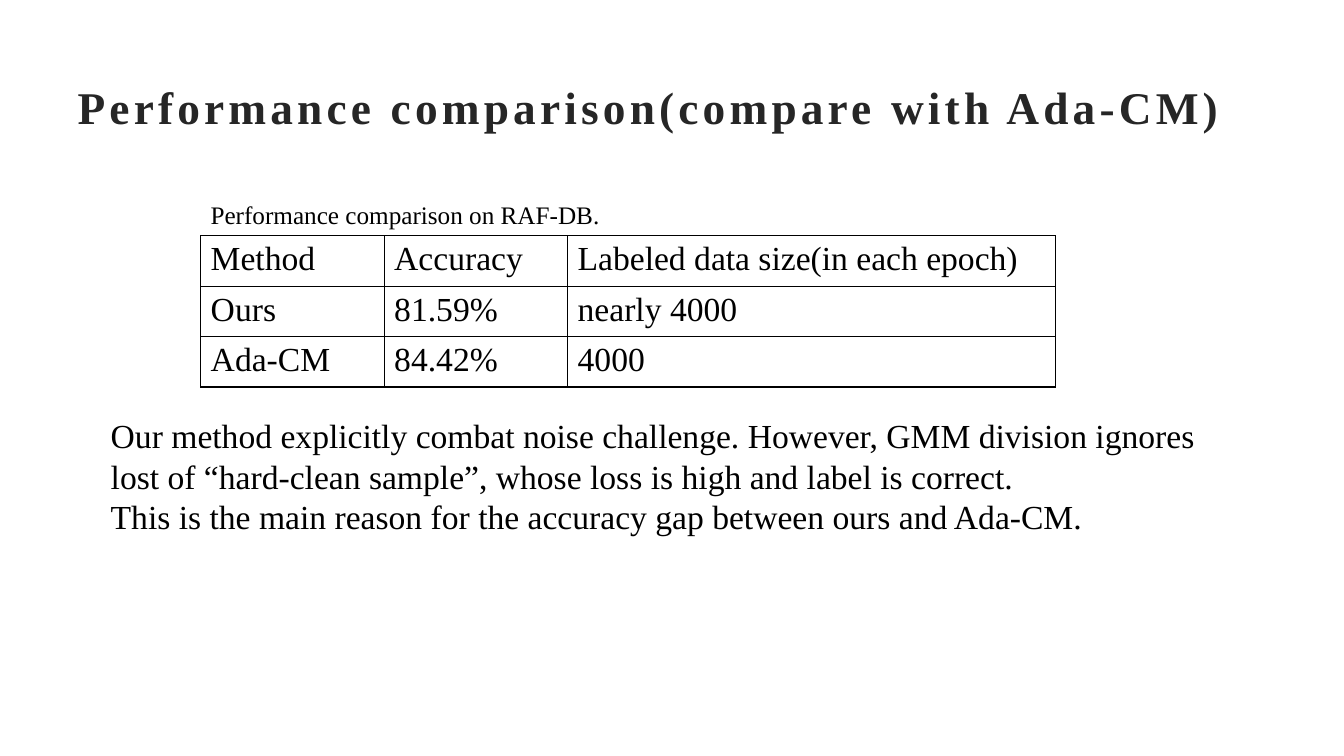
"""Build the slide comparing our method with Ada-CM."""
import lxml.etree
import pptx
import pptx.dml.color
import pptx.enum.text
import pptx.oxml.ns
import pptx.util

Inches = pptx.util.Inches
COLORS = {"title": "262626", "text": "000000", "border": "000000"}
qn = pptx.oxml.ns.qn


def write(frame, lines, color, **formats):
    """Fill a text frame with formatted left-aligned paragraphs."""
    frame.word_wrap = True
    for index, line in enumerate(lines):
        para = frame.paragraphs[0] if index == 0 else frame.add_paragraph()
        para.alignment = pptx.enum.text.PP_ALIGN.LEFT
        span = para.add_run()
        span.text = line
        span.font.color.rgb = pptx.dml.color.RGBColor.from_string(COLORS[color])
        for name, value in {"name": "Times New Roman", **formats}.items():
            setattr(span.font, name, value)


def place(box, left, top, width, height):
    """Position a shape by lengths in inches."""
    places = {"left": left, "top": top, "width": width, "height": height}
    for name, value in places.items():
        setattr(box, name, Inches(value))


deck = pptx.Presentation()
deck.slide_width, deck.slide_height = Inches(13.33), Inches(7.5)
page = deck.slides.add_slide(deck.slide_layouts[5])

title = page.shapes.title
place(title, 0.67, 0.67, 12, 0.77)
write(title.text_frame, ["Performance comparison(compare with Ada-CM)"], "title",
      size=pptx.util.Pt(32.4), bold=True)
title.text_frame.auto_size = pptx.enum.text.MSO_AUTO_SIZE.NONE
title.text_frame.vertical_anchor = pptx.enum.text.MSO_ANCHOR.MIDDLE
title.text_frame.paragraphs[0].runs[0].font._element.set("spc", "300")

results = [
    ["Method", "Accuracy", "Labeled data size(in each epoch)"],
    ["Ours", "81.59%", "nearly 4000"],
    ["Ada-CM", "84.42%", "4000"],
]
widths = [1.82, 1.82, 4.84]
row_height = 0.5
table = page.shapes.add_table(
    len(results), len(widths), Inches(1.99), Inches(2.34),
    Inches(sum(widths)), Inches(row_height * len(results))).table
table.first_row = table.horz_banding = False
for column, width in zip(table.columns, widths):
    column.width = Inches(width)
for row, values in zip(table.rows, results):
    row.height = Inches(row_height)
    for cell, value in zip(row.cells, values):
        write(cell.text_frame, [value], "text", size=pptx.util.Pt(24))
        properties = cell._tc.get_or_add_tcPr()
        for side in ("a:lnL", "a:lnR", "a:lnT", "a:lnB"):
            border = lxml.etree.SubElement(properties, qn(side), w="12700")
            fill = lxml.etree.SubElement(border, qn("a:solidFill"))
            lxml.etree.SubElement(fill, qn("a:srgbClr"), val=COLORS["border"])
        cell.fill.background()

caption = page.shapes.add_textbox(0, 0, 0, 0)
place(caption, 1.99, 1.93, 4.44, 0.4)
write(caption.text_frame, ["Performance comparison on RAF-DB."], "text",
      size=pptx.util.Pt(18))
caption.text_frame.auto_size = pptx.enum.text.MSO_AUTO_SIZE.SHAPE_TO_FIT_TEXT

discussion = page.shapes.add_textbox(0, 0, 0, 0)
place(discussion, 1, 4.07, 11.04, 2.5)
write(discussion.text_frame, [
    "Our method explicitly combat noise challenge. However, GMM division ignores "
    "lost of “hard-clean sample”, whose loss is high and label is correct.",
    "This is the main reason for the accuracy gap between ours and Ada-CM.",
], "text", size=pptx.util.Pt(24))

deck.save("out.pptx")
